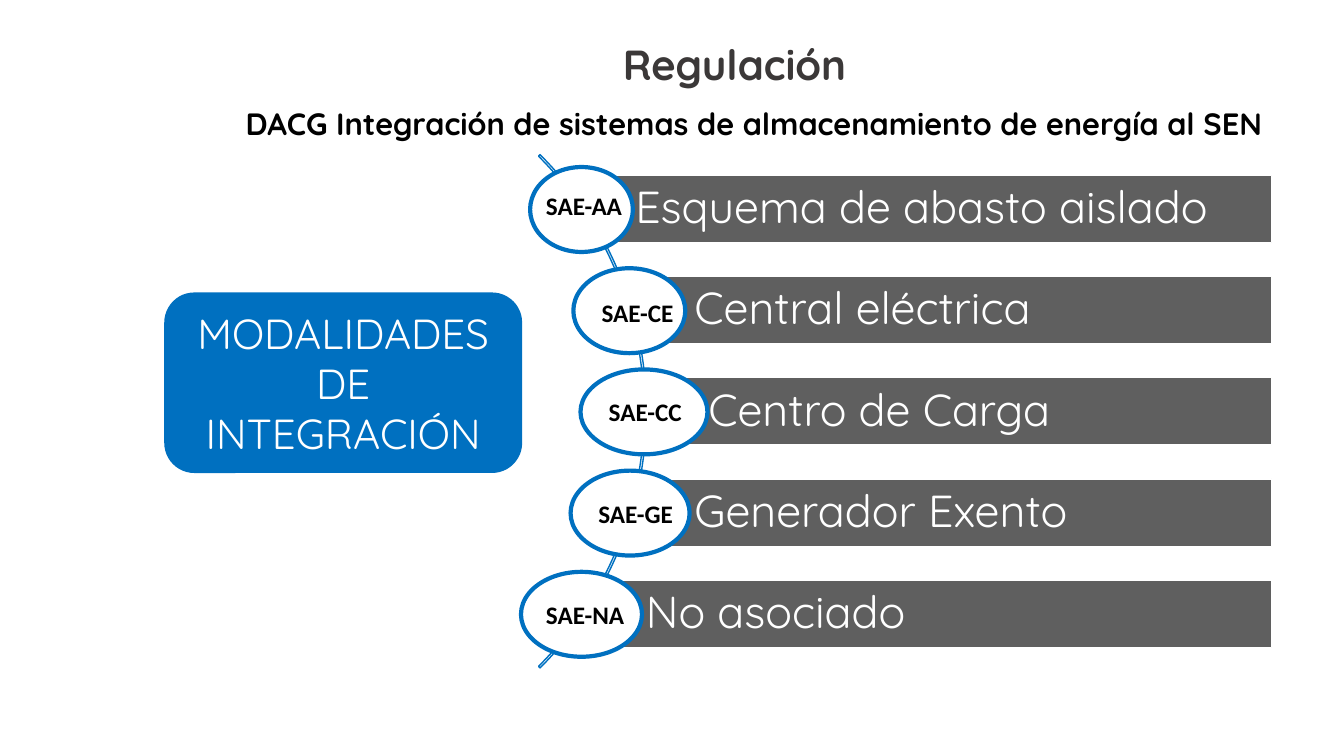
from dataclasses import dataclass

from lxml import etree
from pptx import Presentation
from pptx.dml.color import RGBColor
from pptx.enum import shapes, text
from pptx.util import Cm, Pt


@dataclass(frozen=True)
class Theme:
    blue: str = "0070C0"
    bar: str = "5F5F5F"
    white: str = "FFFFFF"
    black: str = "000000"
    title: str = "3B3838"
    body_font: str = "Quicksand"
    label_font: str = "Calibri"
    bar_size: int = 32
    title_size: int = 30
    subtitle_size: int = 22
    label_size: int = 18


theme = Theme()
presentation = Presentation()
presentation.slide_width, presentation.slide_height = Cm(33.87), Cm(19.05)
slide = presentation.slides.add_slide(presentation.slide_layouts[6])


def add_shape(kind, left, top, width, height, fill=None, line=None, weight=1):
    """Add a preset shape, measured in centimetres, with no shadow."""
    shape = slide.shapes.add_shape(kind, Cm(left), Cm(top), Cm(width), Cm(height))
    shape.shadow.inherit = False
    if fill:
        shape.fill.solid()
        shape.fill.fore_color.rgb = RGBColor.from_string(fill)
    else:
        shape.fill.background()
    if line:
        shape.line.color.rgb = RGBColor.from_string(line)
        shape.line.width = Pt(weight)
    else:
        shape.line.fill.background()
    return shape


def write(shape, words, size, color, font=theme.body_font, bold=False,
          align=text.PP_ALIGN.LEFT, wrap=True):
    """Put one formatted paragraph in a shape and return the paragraph."""
    shape.text_frame.text = words
    shape.text_frame.word_wrap = wrap
    paragraph = shape.text_frame.paragraphs[0]
    paragraph.alignment = align
    run_font = paragraph.runs[0].font
    run_font.name, run_font.size, run_font.bold = font, Pt(size), bold
    run_font.color.rgb = RGBColor.from_string(color)
    return paragraph


# Arc behind the five storage types
arc = add_shape(shapes.MSO_SHAPE.BLOCK_ARC, -2, 1.22, 18.29, 18.29, line=theme.blue)
for index, value in enumerate((189, 27, 0.003)):
    arc.adjustments[index] = value

# name, code, bar left, text inset, oval left, oval width, label left, width, drop
modes = [
    ("Esquema de abasto aislado", "SAE-AA", 14.66, 1.35, 13.36, 2.59, 13.51, 2.49, 0.25),
    ("Central eléctrica", "SAE-CE", 15.88, 1.62, 14.45, 2.82, 14.91, 2.36, 0.4),
    ("Centro de Carga", "SAE-CC", 16.23, 1.62, 14.63, 3.2, 15.09, 2.39, 0.35),
    ("Generador Exento", "SAE-GE", 15.88, 1.62, 14.38, 3, 14.83, 2.41, 0.35),
    ("No asociado", "SAE-NA", 14.66, 1.62, 13.13, 3.05, 13.51, 2.51, 0.35),
]
first_top, pitch, bars_right = 4.42, 2.55, 32.05
for row, (name, code, bar_left, inset, oval_left, oval_width,
          label_left, label_width, drop) in enumerate(modes):
    top = first_top + row * pitch
    bar = add_shape(shapes.MSO_SHAPE.RECTANGLE, bar_left, top, bars_right - bar_left, 1.7,
                    theme.bar, theme.white)
    paragraph = write(bar, name, theme.bar_size, theme.white)
    paragraph.line_spacing = 0.9
    frame = bar.text_frame
    frame.vertical_anchor = text.MSO_ANCHOR.MIDDLE
    frame.margin_left = Cm(inset)
    frame.margin_top = frame.margin_right = frame.margin_bottom = Cm(0.23)

    add_shape(shapes.MSO_SHAPE.OVAL, oval_left, top - 0.21, oval_width, 2.14,
              theme.white, theme.blue, 3)
    label = slide.shapes.add_textbox(Cm(label_left), Cm(top + drop), Cm(label_width), Cm(1.02))
    write(label, code, theme.label_size, theme.black, theme.label_font, bold=True, wrap=False)

heading = add_shape(shapes.MSO_SHAPE.ROUNDED_RECTANGLE, 4.14, 7.37, 9.02, 4.55, theme.blue)
heading.text_frame.vertical_anchor = text.MSO_ANCHOR.MIDDLE
write(heading, "MODALIDADES DE INTEGRACIÓN", theme.title_size, theme.white,
      align=text.PP_ALIGN.CENTER)

title = slide.shapes.add_textbox(Cm(13.97), Cm(0.84), Cm(9.09), Cm(1.55))
write(title, "Regulación", theme.title_size, theme.title, bold=True,
      align=text.PP_ALIGN.CENTER)

subtitle = slide.shapes.add_textbox(Cm(5.94), Cm(2.51), Cm(27.25), Cm(1.19))
paragraph = write(subtitle, "DACG Integración de sistemas de almacenamiento de energía al SEN",
                  theme.subtitle_size, theme.black, bold=True, align=text.PP_ALIGN.JUSTIFY)
paragraph.space_after = Pt(12)

presentation.save("out.pptx")
